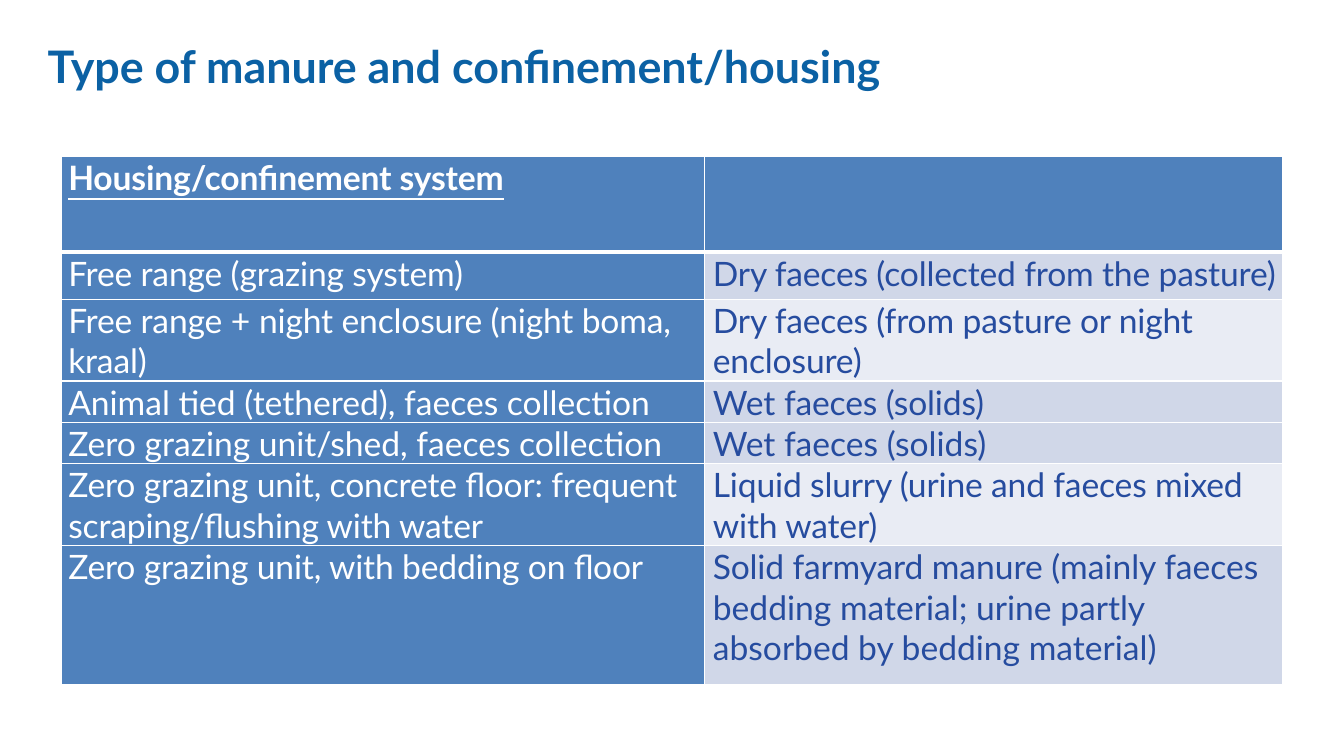
from dataclasses import dataclass

from lxml import etree
from pptx import Presentation
from pptx.dml.color import RGBColor
from pptx.enum.text import MSO_ANCHOR
from pptx.oxml.ns import qn
from pptx.util import Pt

TOP = MSO_ANCHOR.TOP
PX = 9525


@dataclass(frozen=True)
class Theme:
    font: str = "Lato"
    title: str = "0B61A4"
    header: str = "4F81BC"
    band: str = "D0D7E8"
    pale: str = "E9ECF4"
    white: str = "FFFFFF"
    answer: str = "264C9F"
    title_size: int = 32
    table_size: int = 24
    rule: int = 1
    header_rule: int = 3


THEME = Theme()
COLUMNS = [613, 551]
HEADING = [("Housing/confinement system", -10)]
ROWS = [
    (45, THEME.band, [("Free range (grazing system)", -10)],
     [("Dry faeces (collected from the pasture)", -10)]),
    (78, THEME.pale,
     [("Free range", -10), (" + ", 0), ("night enclosure (night boma, kraal)", -10)],
     [("Dry faeces (from pasture or night enclosure)", -10)]),
    (39, THEME.band, [("Animal tied (tethered), faeces collection", 0)],
     [("Wet ", 0), ("faeces (solids)", -10)]),
    (39, THEME.band, [("Zero grazing unit/shed, faeces collection", 0)],
     [("Wet faeces (solids)", 0)]),
    (78, THEME.pale,
     [("Zero grazing unit, concrete floor: frequent scraping/flushing with water", -10)],
     [("Liquid slurry (urine and faeces mixed with water)", -10)]),
    (132, THEME.band,
     [("Zero grazing unit, with bedding ", -10), ("on ", -20), ("floor", -10)],
     [("Solid farmyard ", -10),
      ("manure (mainly faeces bedding material; urine partly absorbed by bedding material)", 0)]),
]


def px(n):
    return n * PX


def add_run(p, text, size, color, bold=False, underline=False, spacing=0):
    r = p.add_run()
    r.text = text
    r.font.name = THEME.font
    r.font.size = Pt(size)
    r.font.bold = bold
    r.font.underline = underline
    r.font.color.rgb = RGBColor.from_string(color)
    if spacing:
        r._r.get_or_add_rPr().set("spc", str(spacing))


def set_borders(cell, top, bottom):
    tcPr = cell._tc.get_or_add_tcPr()
    widths = {"lnL": THEME.rule, "lnR": THEME.rule, "lnT": top, "lnB": bottom}
    for i, (side, width) in enumerate(widths.items()):
        ln = etree.Element(qn(f"a:{side}"), w=str(Pt(width)))
        fill = etree.SubElement(ln, qn("a:solidFill"))
        etree.SubElement(fill, qn("a:srgbClr"), val=THEME.white)
        tcPr.insert(i, ln)


def fill_cell(cell, runs, fill, color, indent, top, bottom, heading=False):
    cell.fill.solid()
    cell.fill.fore_color.rgb = RGBColor.from_string(fill)
    cell.margin_left, cell.margin_top = px(indent), px(1)
    cell.margin_right = cell.margin_bottom = 0
    cell.vertical_anchor = TOP
    set_borders(cell, top, bottom)
    for text, spacing in runs:
        add_run(cell.text_frame.paragraphs[0], text, THEME.table_size, color,
                heading, heading, spacing)


def add_title(s, x, y, w, h):
    tf = s.shapes.add_textbox(px(x), px(y), px(w), px(h)).text_frame
    tf.word_wrap = True
    tf.vertical_anchor = TOP
    p = tf.paragraphs[0]
    p.line_spacing = 0.9
    add_run(p, "Type of manure and confinement/housing",
            THEME.title_size, THEME.title, bold=True)


def add_manure_table(s, x, y, w, h):
    table = s.shapes.add_table(len(ROWS) + 1, len(COLUMNS),
                               px(x), px(y), px(w), px(h)).table
    table.first_row = table.horz_banding = False
    for column, width in zip(table.columns, COLUMNS):
        column.width = px(width)
    table.rows[0].height = px(h - sum(row[0] for row in ROWS))
    for j, runs in enumerate([HEADING, []]):
        fill_cell(table.cell(0, j), runs, THEME.header, THEME.white, 7,
                  THEME.rule, THEME.header_rule, heading=True)
    for i, (height, band, system, manure) in enumerate(ROWS, 1):
        table.rows[i].height = px(height)
        top = THEME.header_rule if i == 1 else THEME.rule
        fill_cell(table.cell(i, 0), system, THEME.header, THEME.white, 7,
                  top, THEME.rule)
        fill_cell(table.cell(i, 1), manure, band, THEME.answer, 8,
                  top, THEME.rule)


def main():
    prs = Presentation()
    prs.slide_width, prs.slide_height = px(1280), px(720)
    s = prs.slides.add_slide(prs.slide_layouts[6])
    add_title(s, 36, 38, 1128, 92)
    add_manure_table(s, 58, 149, sum(COLUMNS), 502)
    prs.save("out.pptx")


if __name__ == "__main__":
    main()
